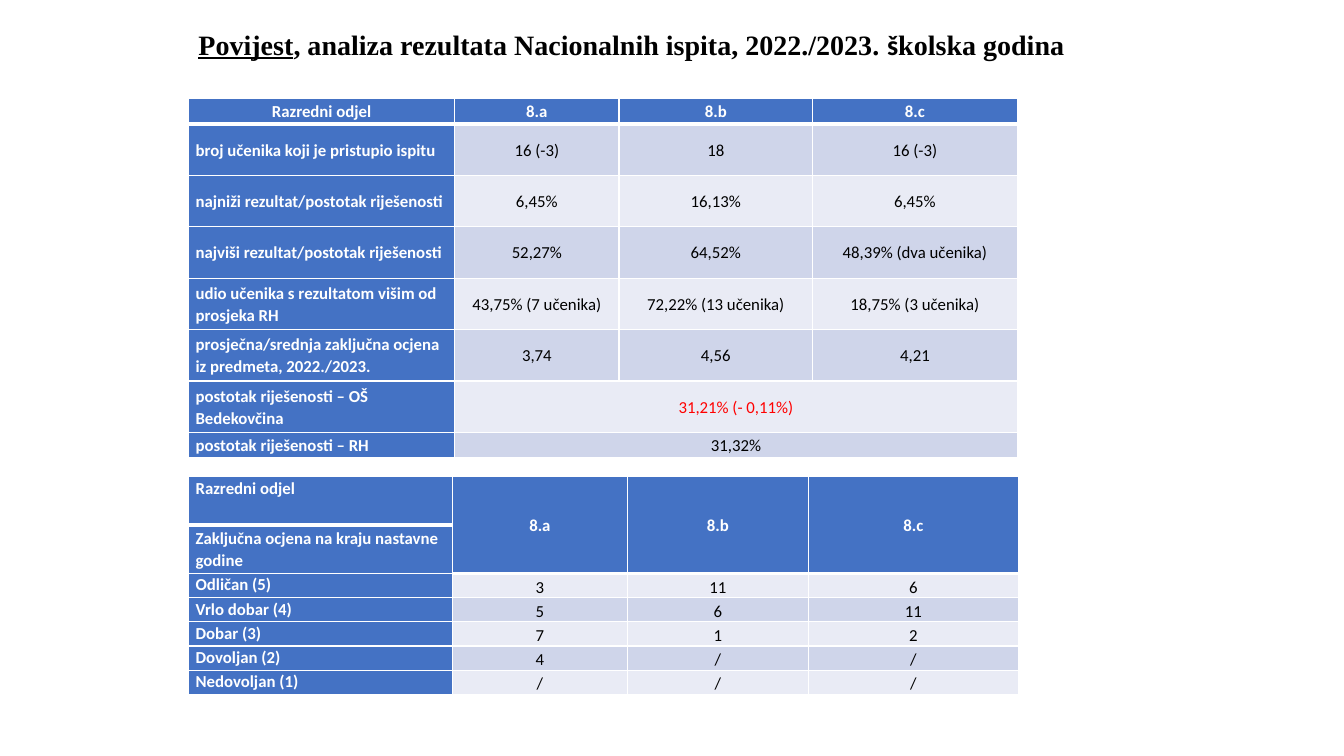
import pptx
import pptx.dml.color
import pptx.enum.text
import pptx.util
from lxml import etree
from pptx.oxml.ns import qn

ALIGN = pptx.enum.text.PP_ALIGN
ANCHOR = pptx.enum.text.MSO_ANCHOR

THEME = {
    "header": "4472C4", "odd_row": "CFD5EA", "even_row": "E9EBF5",
    "white": "FFFFFF", "black": "000000", "alert": "FF0000",
    "body_font": "Calibri", "title_font": "Times New Roman",
    "body_size": 12, "title_size": 20,
    "thin": 1, "thick": 3,
}

# Title runs: text, font, underlined
TITLE = [
    ("Povijest", "title_font", True),
    (", analiza rezultata Nacionalnih ispita, 2022./2023. ", "title_font", False),
    ("š", "body_font", False),
    ("kolska godina", "title_font", False),
]

# Merges are (first row, first column, last row, last column)
RESULTS = {
    "top": 0.98,
    "columns": [2.64, 1.63, 1.92, 2.03],
    "rows": [0.25] + [0.51] * 6 + [0.25],
    "header_rows": 1,
    "merges": [(6, 1, 6, 3), (7, 1, 7, 3)],
    "label_anchors": [ANCHOR.MIDDLE] * 8,
    "label_aligns": [ALIGN.CENTER] + [ALIGN.LEFT] * 7,
    "value_anchor": ANCHOR.MIDDLE,
    "alerts": [(6, 1)],
    "cells": [
        ["Razredni odjel", "8.a", "8.b", "8.c"],
        ["broj učenika koji je pristupio ispitu", "16 (-3)", "18", "16 (-3)"],
        ["najniži rezultat/postotak riješenosti", "6,45%", "16,13%", "6,45%"],
        ["najviši rezultat/postotak riješenosti", "52,27%", "64,52%", "48,39% (dva učenika)"],
        ["udio učenika s rezultatom višim od prosjeka RH",
         "43,75% (7 učenika)", "72,22% (13 učenika)", "18,75% (3 učenika)"],
        ["prosječna/srednja zaključna ocjena iz predmeta, 2022./2023.", "3,74", "4,56", "4,21"],
        ["postotak riješenosti – OŠ Bedekovčina", "31,21% (- 0,11%)", "", ""],
        ["postotak riješenosti – RH", "31,32%", "", ""],
    ],
}
GRADES = {
    "top": 4.73,
    "columns": [2.62, 1.73, 1.8, 2.08],
    "rows": [0.48] * 2 + [0.24] * 5,
    "header_rows": 2,
    "merges": [(0, column, 1, column) for column in (1, 2, 3)],
    "label_anchors": [ANCHOR.TOP, ANCHOR.MIDDLE] + [ANCHOR.TOP] * 5,
    "label_aligns": [ALIGN.LEFT] * 7,
    "value_anchor": ANCHOR.BOTTOM,
    "alerts": [],
    "cells": [
        ["Razredni odjel", "8.a", "8.b", "8.c"],
        ["Zaključna ocjena na kraju nastavne godine", "", "", ""],
        ["Odličan (5)", "3", "11", "6"],
        ["Vrlo dobar (4)", "5", "6", "11"],
        ["Dobar (3)", "7", "1", "2"],
        ["Dovoljan (2)", "4", "/", "/"],
        ["Nedovoljan (1)", "/", "/", "/"],
    ],
}

LEFT = 1.87
CELL_INSET = 0.07
LINE_SPACING = 1.07


def inches(value):
    return pptx.util.Inches(value)


def color(name):
    return pptx.dml.color.RGBColor.from_string(THEME[name])


def style_font(font, family, size, color_name, bold):
    font.name = THEME[family]
    font.size = pptx.util.Pt(THEME[size])
    font.color.rgb = color(color_name)
    font.bold = bold


def add_borders(cell, bottom):
    properties = cell._tc.get_or_add_tcPr()
    for side, width in zip("LRTB", ("thin", "thin", "thin", bottom)):
        line = etree.SubElement(properties, qn("a:ln" + side),
                                w=str(pptx.util.Pt(THEME[width])))
        fill = etree.SubElement(line, qn("a:solidFill"))
        etree.SubElement(fill, qn("a:srgbClr"), val=THEME["white"])


def fill_cell(cell, data, row, column):
    is_label = column == 0
    is_header = is_label or row < data["header_rows"]
    under_header = row == 0 or (row < data["header_rows"] and not is_label)

    add_borders(cell, "thick" if under_header else "thin")
    cell.fill.solid()
    band = "odd_row" if row % 2 else "even_row"
    cell.fill.fore_color.rgb = color("header" if is_header else band)
    cell.margin_left = cell.margin_right = inches(CELL_INSET)
    cell.margin_top = cell.margin_bottom = 0
    if is_label:
        cell.vertical_anchor = data["label_anchors"][row]
    else:
        cell.vertical_anchor = ANCHOR.MIDDLE if is_header else data["value_anchor"]

    cell.text = data["cells"][row][column]
    paragraph = cell.text_frame.paragraphs[0]
    paragraph.alignment = data["label_aligns"][row] if is_label else ALIGN.CENTER
    paragraph.line_spacing = LINE_SPACING
    value_color = "alert" if (row, column) in data["alerts"] else "black"
    style_font(paragraph.font, "body_font", "body_size",
               "white" if is_header else value_color, is_header)


def add_class_table(slide, data):
    rows, columns = data["rows"], data["columns"]
    table = slide.shapes.add_table(
        len(rows), len(columns), inches(LEFT), inches(data["top"]),
        inches(sum(columns)), inches(sum(rows))).table
    for table_column, width in zip(table.columns, columns):
        table_column.width = inches(width)
    for row, height in enumerate(rows):
        table.rows[row].height = inches(height)
        for column in range(len(columns)):
            fill_cell(table.cell(row, column), data, row, column)
    for first_row, first_column, last_row, last_column in data["merges"]:
        table.cell(first_row, first_column).merge(table.cell(last_row, last_column))


def add_title(slide):
    frame = slide.shapes.add_textbox(
        inches(LEFT), inches(0.22), inches(8.84), inches(0.74)).text_frame
    frame.word_wrap = False
    frame.vertical_anchor = ANCHOR.TOP
    for text, family, underlined in TITLE:
        run = frame.paragraphs[0].add_run()
        run.text = text
        style_font(run.font, family, "title_size", "black", True)
        run.font.underline = underlined


def main():
    presentation = pptx.Presentation()
    presentation.slide_width = inches(13.33)
    presentation.slide_height = inches(7.5)
    slide = presentation.slides.add_slide(presentation.slide_layouts[6])
    for data in (RESULTS, GRADES):
        add_class_table(slide, data)
    add_title(slide)
    presentation.save("out.pptx")


if __name__ == "__main__":
    main()
